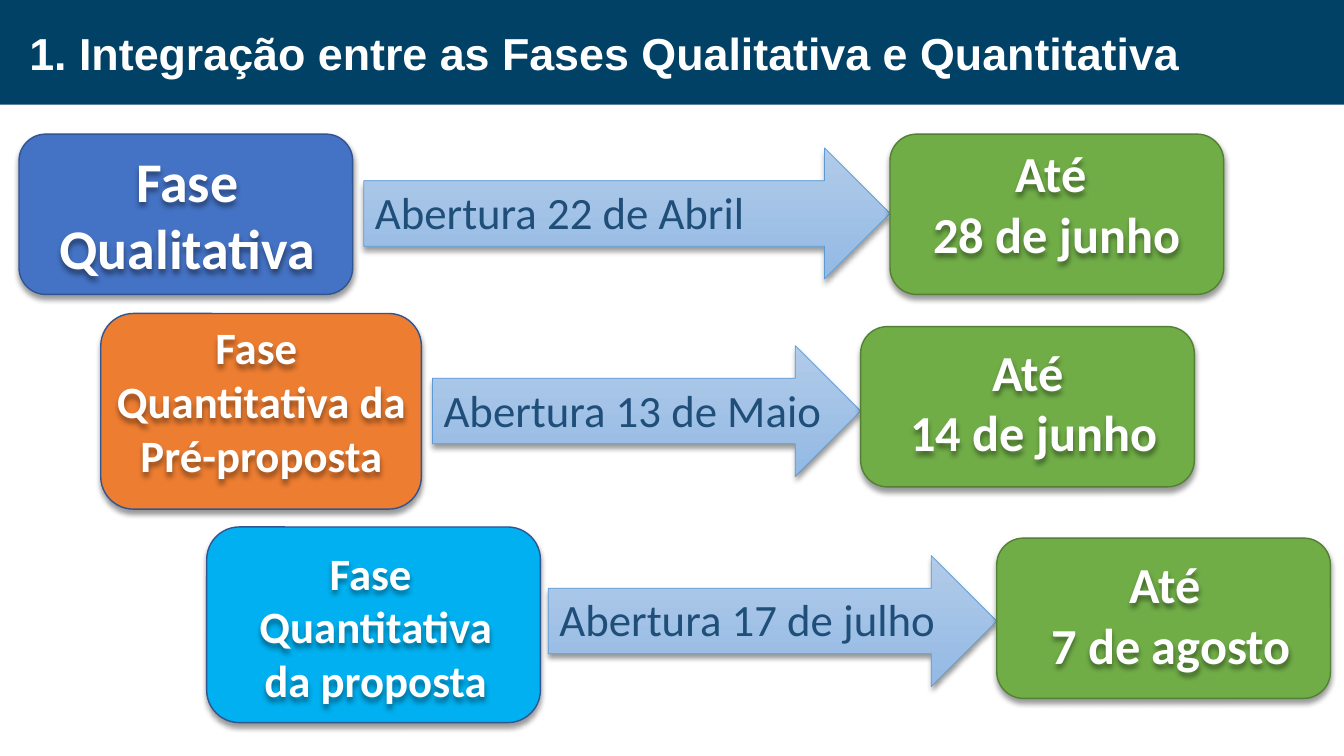
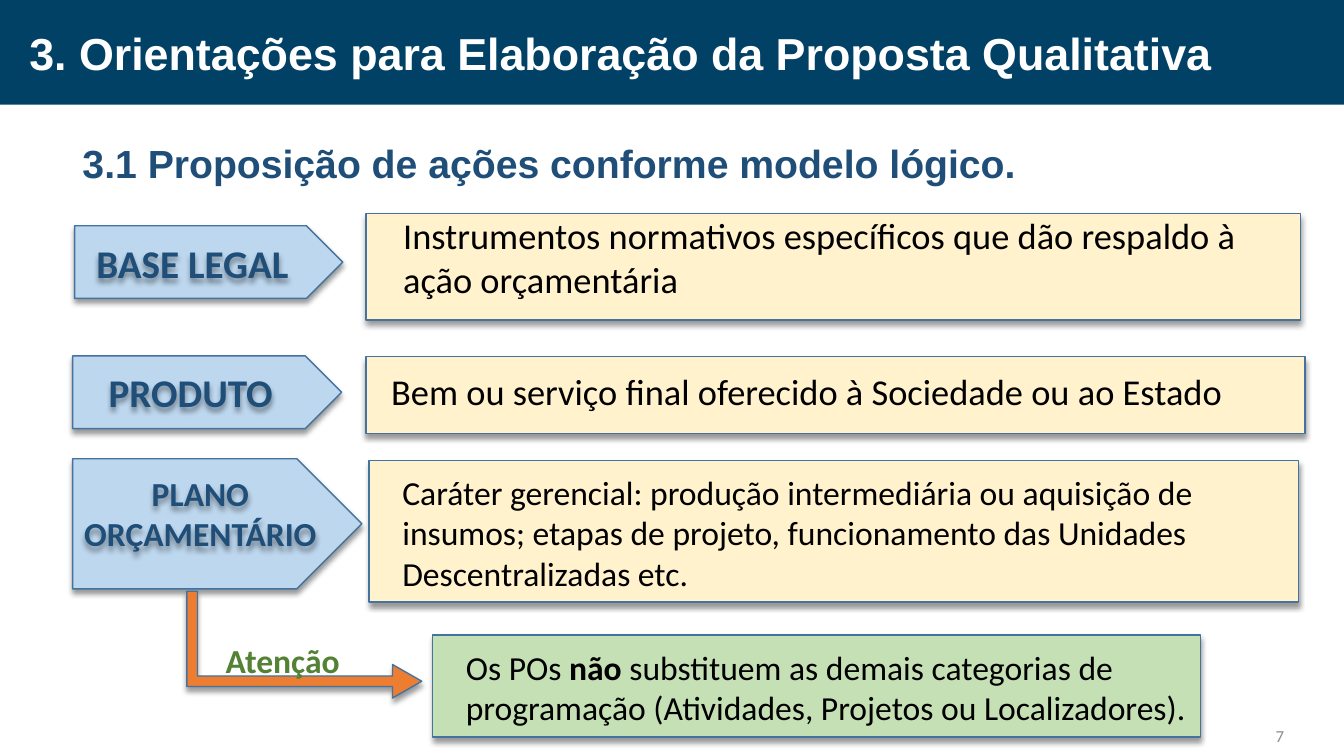
from lxml.etree import SubElement
from pptx import Presentation
from pptx.dml.color import RGBColor
from pptx.enum.shapes import MSO_SHAPE as Preset
from pptx.enum.text import MSO_ANCHOR as Anchor, PP_ALIGN as Align
from pptx.oxml.ns import qn
from pptx.util import Cm, Pt

COLORS = {
    "band": "004165", "white": "FFFFFF", "black": "000000", "navy": "1F4E79",
    "blue": "4472C4", "orange": "ED7D31", "cyan": "00B0F0", "green": "70AD47",
    "phase_line": "325491", "date_line": "538035", "arrow_line": "5B9BD5",
    "arrow_top": "B1CBE9", "arrow_bottom": "93B9E4",
    "tag": "BDD7EE", "cream": "FFF2CC", "mint": "C5E0B4", "line": "43739E",
    "warning": "548235", "page": "8C8C8C",
}
SLIDE_WIDTH, SLIDE_HEIGHT = 33.87, 19.05
DATE_WIDTH, DATE_HEIGHT = 8.41, 4.04
ARROW_HEIGHT = 3.3

PHASE_ROWS = [
    dict(phase=(0.48, 3.38, 8.41, 4.04), fill="blue", name=["Fase Qualitativa"],
         size=40, name_offset=(0.61, 0.18), name_width=7.26,
         arrow=(9.17, 3.73), opening="Abertura 22 de Abril",
         date=(22.43, 3.38), deadline="28 de junho", date_offset=(0.58, 0.08)),
    dict(phase=(2.54, 7.9, 8.08, 4.93), fill="orange",
         name=["Fase ", "Quantitativa da Pré-proposta"],
         size=32, name_offset=(0.15, 0.03), name_width=7.8,
         arrow=(10.9, 8.71), opening="Abertura 13 de Maio",
         date=(21.69, 8.23), deadline="14 de junho", date_offset=(0.74, 0.23)),
    dict(phase=(5.21, 13.28, 8.41, 4.93), fill="cyan",
         name=["Fase ", "Quantitativa da proposta"],
         size=32, name_offset=(0.64, 0.33), name_width=7.24,
         arrow=(13.82, 14), opening="Abertura 17 de julho",
         date=(25.12, 13.56), deadline="7 de agosto", date_offset=(0.76, 0.25)),
]

TAGS = [
    dict(box=(1.88, 5.69, 6.76, 1.83), text="BASE LEGAL", size=28,
         offset=(0.3, 0.2), width=6.15),
    dict(box=(1.83, 8.97, 6.78, 1.83), text="PRODUTO", size=28,
         offset=(0.66, 0.17), width=5.82),
    dict(box=(1.83, 11.56, 7.29, 3.28), text="PLANO ORÇAMENTÁRIO", size=24,
         offset=(-0.64, 0.23), width=7.72, align=Align.CENTER),
]

DESCRIPTIONS = [
    dict(box=(9.22, 5.38, 23.55, 2.69), size=26, inset=(0.94, 0),
         text="Instrumentos normativos específicos que dão respaldo à ação orçamentária"),
    dict(box=(9.22, 8.99, 23.67, 1.93), size=26, inset=(0.64, 0.3),
         text="Bem ou serviço final oferecido à Sociedade ou ao Estado"),
    dict(box=(9.3, 11.61, 23.42, 3.56), size=24, inset=(0.84, 0.28),
         text="Caráter gerencial: produção intermediária ou aquisição de insumos; "
              "etapas de projeto, funcionamento das Unidades Descentralizadas etc."),
    dict(box=(10.9, 16, 19.35, 2.57), size=24, inset=(0.84, 0.3), fill="mint",
         text=[("Os POs ", False), ("não", True),
               (" substituem as demais categorias de programação "
                "(Atividades, Projetos ou Localizadores).", False)]),
]


def rgb(name):
    """Return the palette colour with this name."""
    return RGBColor.from_string(COLORS[name])


def add_shadow(shape):
    """Give a shape a soft shadow straight below it."""
    shape.shadow.inherit = False
    effects = shape._element.spPr.find(qn("a:effectLst"))
    shadow = SubElement(effects, qn("a:outerShdw"), blurRad=str(Pt(4)),
                        dist=str(Pt(3)), dir="5400000", rotWithShape="0")
    color = SubElement(shadow, qn("a:srgbClr"), val=COLORS["black"])
    SubElement(color, qn("a:alpha"), val="40000")


def write_text(shape, paragraphs, size=24, color="black", bold=False, font="Calibri",
               align=Align.LEFT, anchor=Anchor.TOP, margins=(0.25, 0.13, 0.25, 0.13)):
    """Fill a shape with paragraphs, each a string or a list of (text, bold) runs."""
    frame = shape.text_frame
    frame.word_wrap = True
    frame.vertical_anchor = anchor
    (frame.margin_left, frame.margin_top,
     frame.margin_right, frame.margin_bottom) = map(Cm, margins)
    for index, content in enumerate(paragraphs):
        paragraph = frame.add_paragraph() if index else frame.paragraphs[0]
        paragraph.alignment = align
        runs = [(content, bold)] if isinstance(content, str) else content
        for text, heavy in runs:
            run = paragraph.add_run()
            run.text = text
            run.font.name = font
            run.font.size = Pt(size)
            run.font.bold = heavy
            run.font.color.rgb = rgb(color)


def add_shape(slide, preset, box, fill, line=None, line_width=1):
    """Add a filled preset shape; an outlined one also gets a shadow."""
    shape = slide.shapes.add_shape(preset, *map(Cm, box))
    shape.fill.solid()
    shape.fill.fore_color.rgb = rgb(fill)
    if line:
        shape.line.color.rgb = rgb(line)
        shape.line.width = Pt(line_width)
        add_shadow(shape)
    else:
        shape.line.fill.background()
        shape.shadow.inherit = False
    return shape


def add_text(slide, box, paragraphs, shadow=False, **text_format):
    """Add a text box, with shadowed letters on request."""
    text_box = slide.shapes.add_textbox(*map(Cm, box))
    write_text(text_box, paragraphs, **text_format)
    if shadow:
        add_shadow(text_box)


def add_label(slide, box, offset, width, paragraphs, **text_format):
    """Place shadowed bold text at an offset inside a box."""
    left, top, _, height = box
    add_text(slide, (left + offset[0], top + offset[1], width, height - 0.4),
             paragraphs, shadow=True, bold=True, **text_format)


def add_titled_slide(presentation, title):
    """Add a blank slide with the title band."""
    slide = presentation.slides.add_slide(presentation.slide_layouts[6])
    band = add_shape(slide, Preset.RECTANGLE, (0, 0, SLIDE_WIDTH, 2.64), "band")
    write_text(band, [title], size=32, color="white", bold=True, font="Arial",
               anchor=Anchor.MIDDLE, margins=(0.74, 0, 0, 0))
    return slide


def add_opening_arrow(slide, box, text):
    """Add the gradient arrow that carries an opening date."""
    arrow = add_shape(slide, Preset.RIGHT_ARROW, box, "arrow_top", "arrow_line", 0.5)
    arrow.fill.gradient()
    arrow.fill.gradient_angle = 270
    for stop, name in zip(arrow.fill.gradient_stops, ("arrow_top", "arrow_bottom")):
        stop.color.rgb = rgb(name)
    write_text(arrow, [text], size=32, color="navy", anchor=Anchor.MIDDLE,
               margins=(0.28, 0, 0, 0.1))


def add_phase_row(slide, row):
    """Add a phase, its opening arrow and its deadline."""
    add_shape(slide, Preset.ROUNDED_RECTANGLE, row["phase"], row["fill"], "phase_line")
    add_label(slide, row["phase"], row["name_offset"], row["name_width"], row["name"],
              size=row["size"], color="white", align=Align.CENTER)
    arrow_left, arrow_top = row["arrow"]
    arrow_width = row["date"][0] - arrow_left
    add_opening_arrow(slide, (arrow_left, arrow_top, arrow_width, ARROW_HEIGHT),
                      row["opening"])
    date_box = (*row["date"], DATE_WIDTH, DATE_HEIGHT)
    add_shape(slide, Preset.ROUNDED_RECTANGLE, date_box, "green", "date_line")
    add_label(slide, date_box, row["date_offset"], 7.26, ["Até ", row["deadline"]],
              size=36, color="white", align=Align.CENTER)


def add_tag(slide, box, text, size, offset, width, align=Align.LEFT):
    """Add a pentagon tag with its caption."""
    add_shape(slide, Preset.PENTAGON, box, "tag", "line")
    add_label(slide, box, offset, width, [text], size=size, color="navy", align=align)


def add_description(slide, box, text, size, inset, fill="cream"):
    """Add a rectangle holding an explanation."""
    rectangle = add_shape(slide, Preset.RECTANGLE, box, fill, "line")
    write_text(rectangle, [text], size=size, margins=(*inset, 0.25, 0))


def add_warning(slide, box):
    """Add the bent arrow, turned a quarter, with its caption."""
    left, top, width, height = box
    arrow = add_shape(slide, Preset.BENT_UP_ARROW,
                      (left + (width - height) / 2, top + (height - width) / 2,
                       height, width), "orange", "line")
    arrow.rotation = 90
    for index, value in enumerate((0.099, 0.157, 0.275)):
        arrow.adjustments[index] = value
    add_text(slide, (left + 0.73, top + 1.1, 6.99, 1.27), ["Atenção"],
             color="warning", bold=True)


def build_phases_slide(presentation):
    """Build the slide with the calendar of phases."""
    slide = add_titled_slide(
        presentation, "1. Integração entre as Fases Qualitativa e Quantitativa")
    for row in PHASE_ROWS:
        add_phase_row(slide, row)


def build_guidance_slide(presentation):
    """Build the slide with the logic model of actions."""
    slide = add_titled_slide(
        presentation, "3. Orientações para Elaboração da Proposta Qualitativa")
    add_text(slide, (0.3, 3.38, 32.92, 1.45),
             ["3.1 Proposição de ações conforme modelo lógico."], size=28,
             color="navy", bold=True, font="Arial", margins=(1.78, 0.13, 0.25, 0.13))
    for tag in TAGS:
        add_tag(slide, **tag)
    for description in DESCRIPTIONS:
        add_description(slide, **description)
    add_warning(slide, (4.71, 14.9, 5.92, 2.69))
    add_text(slide, (31.62, 18.03, 0.99, 1.02), ["7"], size=12, color="page",
             align=Align.RIGHT, anchor=Anchor.MIDDLE)


def main():
    """Build and save the presentation."""
    presentation = Presentation()
    presentation.slide_width = Cm(SLIDE_WIDTH)
    presentation.slide_height = Cm(SLIDE_HEIGHT)
    build_phases_slide(presentation)
    build_guidance_slide(presentation)
    presentation.save("out.pptx")


if __name__ == "__main__":
    main()
